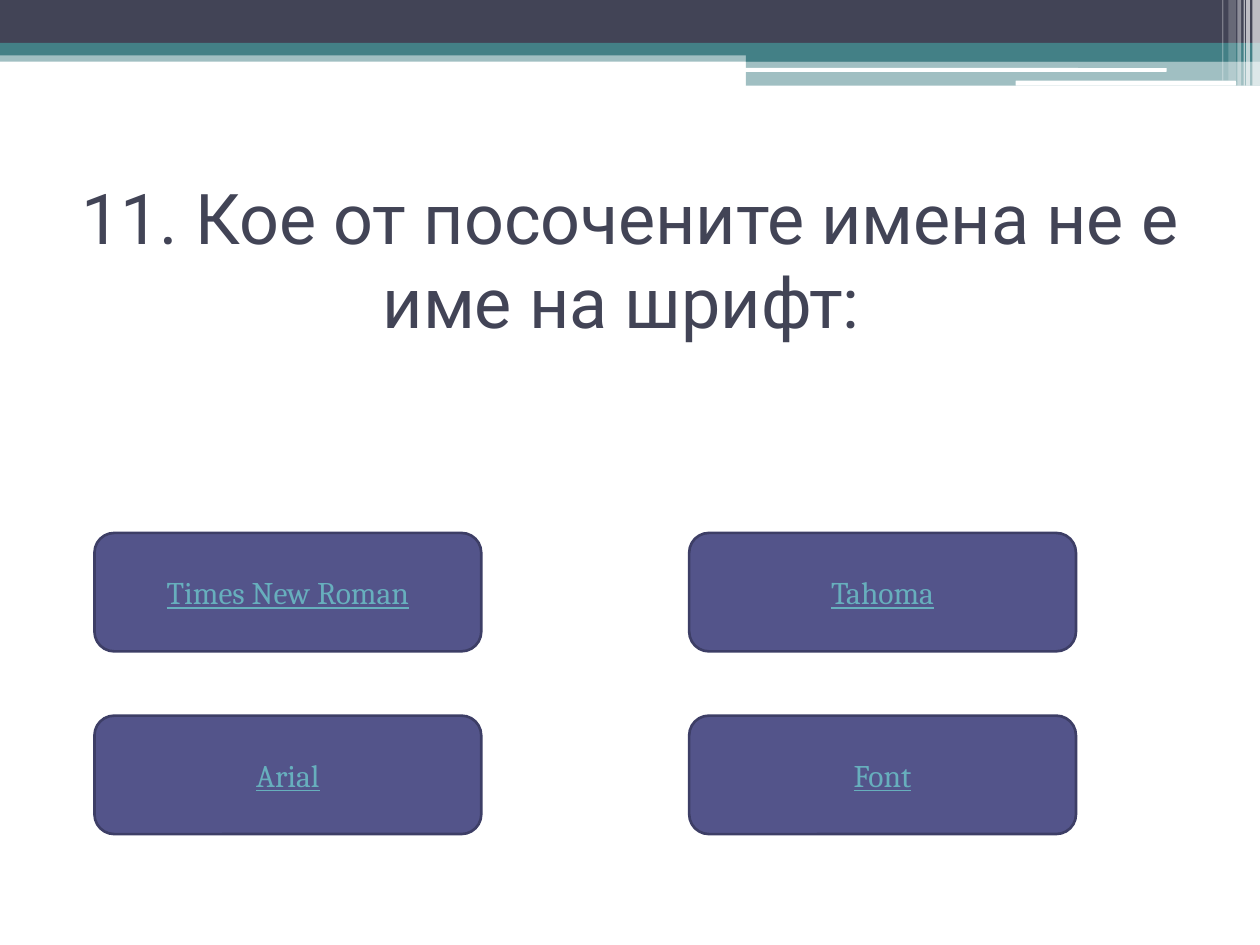
from pptx import Presentation
from pptx.dml.color import RGBColor
from pptx.enum.shapes import MSO_SHAPE
from pptx.enum.text import MSO_ANCHOR, MSO_AUTO_SIZE, PP_ALIGN
from pptx.oxml.ns import qn
from pptx.util import Inches, Pt
from lxml import etree

RECTANGLE = MSO_SHAPE.RECTANGLE
ROUNDED = MSO_SHAPE.ROUNDED_RECTANGLE
MIDDLE = MSO_ANCHOR.MIDDLE
CENTER = PP_ALIGN.CENTER
NO_FIT = MSO_AUTO_SIZE.NONE

COLORS = {
    "slate": "424456",
    "teal": "438086",
    "white": "FFFFFF",
    "button": "53548A",
    "edge": "3D3E66",
    "answer": "67AFBD",
}
TITLE_FONT = {"name": "Roboto", "size": Pt(40), "bold": False}
ANSWER_FONT = {"name": "Cambria", "size": Pt(18), "underline": True}

BANDS = [
    (0, 0.4, 10, 0.09, "teal", 50),
    (0, 0, 10, 0.34, "slate", 100),
    (0, 0.34, 10, 0.1, "teal", 100),
    (5.92, 0.39, 4.08, 0.1, "teal", 100),
    (5.92, 0.48, 4.08, 0.2, "teal", 50),
]
RULES = [(5.91, 0.54, 3.35, 0.03), (8.06, 0.64, 1.75, 0.04)]
STRIPES = [
    (9.94, 0.06, 0.68, 65),
    (9.89, 0.03, 0.68, 65),
    (9.87, 0.01, 0.68, 60),
    (9.82, 0.03, 0.68, 40),
    (9.75, 0.06, 0.64, 20),
    (9.7, 0.01, 0.64, 30),
]
ANSWERS = [["Times New Roman", "Tahoma"], ["Arial", "Font"]]
COLUMNS = [0.75, 5.47]
ROWS = [4.23, 5.68]


class QuizPage:
    """Draws the elements of a quiz slide in one shared style."""

    def __init__(self, deck):
        self.page = deck.slides.add_slide(deck.slide_layouts[5])

    def color(self, name):
        return RGBColor.from_string(COLORS[name])

    def label(self, frame, text, color, font_values):
        frame.word_wrap = True
        frame.vertical_anchor = MIDDLE
        para = frame.paragraphs[0]
        para.alignment = CENTER
        span = para.add_run()
        span.text = text
        for key, value in font_values.items():
            setattr(span.font, key, value)
        span.font.color.rgb = self.color(color)

    def title(self, text, left, top, width, height):
        box = self.page.shapes.title
        place = {"left": left, "top": top, "width": width, "height": height}
        for key, value in place.items():
            setattr(box, key, Inches(value))
        box.text_frame.auto_size = NO_FIT
        box.text_frame.margin_bottom = Inches(0.7)
        self.label(box.text_frame, text, "slate", TITLE_FONT)

    def block(self, kind, left, top, width, height, color, opacity=100):
        box = self.page.shapes.add_shape(
            kind, Inches(left), Inches(top), Inches(width), Inches(height)
        )
        box.shadow.inherit = False
        box.fill.solid()
        box.fill.fore_color.rgb = self.color(color)
        box.line.fill.background()
        if opacity < 100:
            shade = box.element.spPr.find(qn("a:solidFill"))[0]
            etree.SubElement(shade, qn("a:alpha"), val=str(opacity * 1000))
        return box

    def button(self, text, left, top):
        box = self.block(ROUNDED, left, top, 3.07, 0.94, "button")
        box.line.color.rgb = self.color("edge")
        box.line.width = Pt(1.5)
        self.label(box.text_frame, text, "answer", ANSWER_FONT)


def main():
    deck = Presentation()
    deck.slide_width, deck.slide_height = Inches(10), Inches(7.5)
    quiz = QuizPage(deck)
    for left, top, width, height, color, opacity in BANDS:
        quiz.block(RECTANGLE, left, top, width, height, color, opacity)
    for rule in RULES:
        quiz.block(ROUNDED, *rule, "white")
    for left, width, height, opacity in STRIPES:
        quiz.block(RECTANGLE, left, 0, width, height, "white", opacity)
    quiz.title("11. Кое от посочените имена не е име на шрифт: ", 0.5, 1.25, 9, 2.26)
    for top, answers in zip(ROWS, ANSWERS):
        for left, answer in zip(COLUMNS, answers):
            quiz.button(answer, left, top)
    deck.save("out.pptx")


if __name__ == "__main__":
    main()
